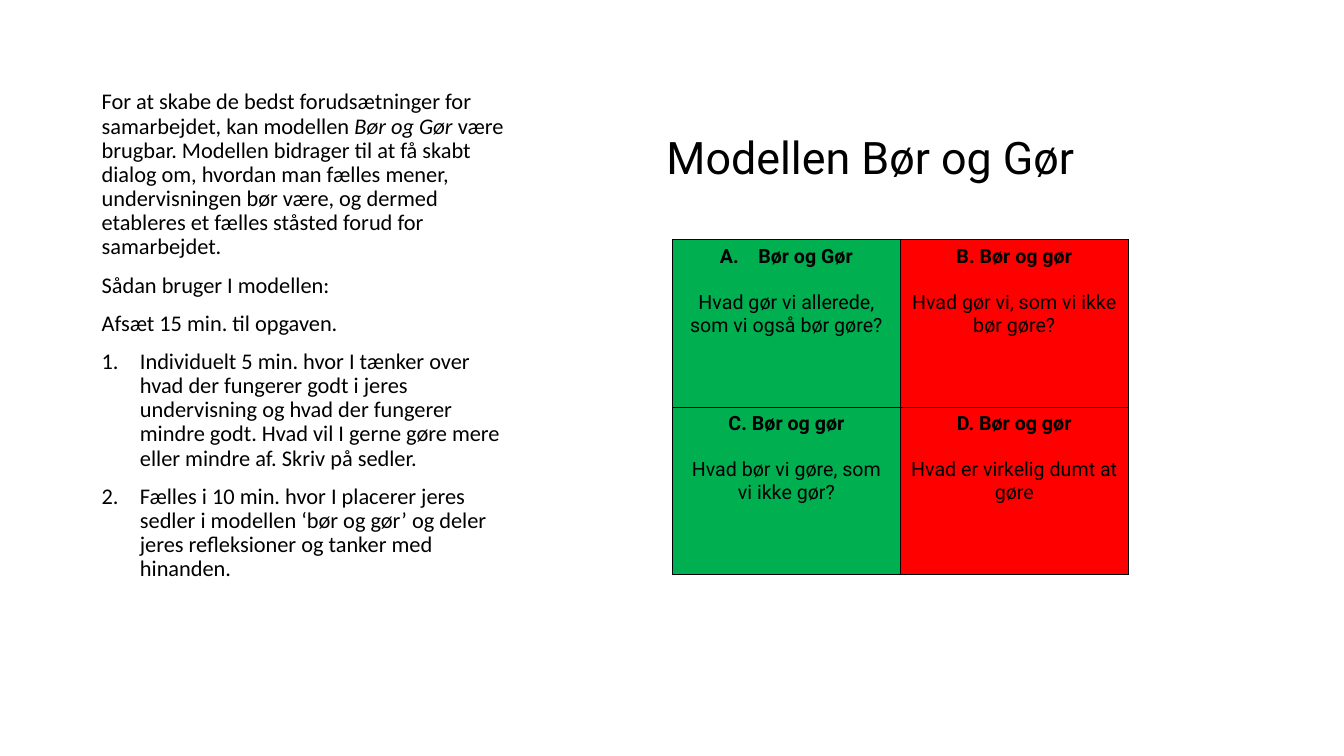
from lxml.etree import SubElement
from pptx import Presentation
from pptx.dml.color import RGBColor
from pptx.enum.text import MSO_ANCHOR, MSO_AUTO_SIZE, PP_ALIGN
from pptx.oxml.ns import qn
from pptx.util import Inches, Pt

COLORS = {"text": "000000", "do": "00B050", "avoid": "FF0000", "border": "000000"}

INTRODUCTION = [
    [("For at skabe de bedst forudsætninger for samarbejdet, kan modellen ", False),
     ("Bør og Gør ", True),
     ("være brugbar. Modellen bidrager til at få skabt dialog om, hvordan man fælles "
      "mener, undervisningen bør være, og dermed etableres et fælles ståsted forud for "
      "samarbejdet.", False)],
    [("Sådan bruger I modellen:", False)],
    [("Afsæt 15 min. til opgaven.", False)],
]
STEPS = [
    [("Individuelt 5 min. hvor I tænker over hvad der fungerer godt i jeres undervisning "
      "og hvad der fungerer mindre godt. Hvad vil I gerne gøre mere eller mindre af. "
      "Skriv på sedler.", False)],
    [("Fælles i 10 min. hvor I placerer jeres sedler i modellen ‘bør og gør’ og deler "
      "jeres refleksioner og tanker med hinanden.", False)],
]
MODEL = [
    [("Bør og Gør", "Hvad gør vi allerede, som vi også bør gøre?"),
     ("B. Bør og gør", "Hvad gør vi, som vi ikke bør gøre?")],
    [("C. Bør og gør", "Hvad bør vi gøre, som vi ikke gør?"),
     ("D. Bør og gør", "Hvad er virkelig dumt at gøre")],
]


class SlideBuilder:
    heading_font = "Roboto"
    body_font = "Calibri"

    def __init__(self, presentation):
        self.slide = presentation.slides.add_slide(presentation.slide_layouts[5])

    def format_run(self, run, font, size, bold=False, italic=False):
        run.font.name = font
        run.font.size = Pt(size)
        run.font.bold = bold
        run.font.italic = italic
        run.font.color.rgb = RGBColor.from_string(COLORS["text"])

    def number(self, paragraph, scheme):
        """Give the paragraph automatic numbering with a hanging indent."""
        properties = paragraph._p.get_or_add_pPr()
        properties.set("marL", str(Inches(0.38)))
        properties.set("indent", str(-Inches(0.38)))
        SubElement(properties, qn("a:buFont"), typeface="+mj-lt")
        SubElement(properties, qn("a:buAutoNum"), type=scheme)

    def title(self, text, left, top, width, height):
        shape = self.slide.shapes.title
        shape.left, shape.top = Inches(left), Inches(top)
        shape.width, shape.height = Inches(width), Inches(height)
        text_frame = shape.text_frame
        text_frame.text = text
        text_frame.auto_size = MSO_AUTO_SIZE.NONE
        text_frame.vertical_anchor = MSO_ANCHOR.BOTTOM
        paragraph = text_frame.paragraphs[0]
        paragraph.alignment = PP_ALIGN.LEFT
        paragraph.line_spacing = 0.9
        self.format_run(paragraph.runs[0], self.heading_font, 32)

    def body(self, paragraphs, steps, left, top, width, height):
        shape = self.slide.shapes.add_textbox(
            Inches(left), Inches(top), Inches(width), Inches(height))
        text_frame = shape.text_frame
        text_frame.word_wrap = True
        for index, pieces in enumerate(paragraphs + steps):
            paragraph = text_frame.add_paragraph() if index else text_frame.paragraphs[0]
            paragraph.line_spacing = 0.9
            paragraph.space_before = Pt(10)
            if index >= len(paragraphs):
                self.number(paragraph, "arabicPeriod")
            for text, italic in pieces:
                run = paragraph.add_run()
                run.text = text
                self.format_run(run, self.body_font, 16, italic=italic)

    def border(self, cell):
        properties = cell._tc.get_or_add_tcPr()
        for side in ("a:lnL", "a:lnR", "a:lnT", "a:lnB"):
            line = SubElement(properties, qn(side), w=str(Pt(1)))
            fill = SubElement(line, qn("a:solidFill"))
            SubElement(fill, qn("a:srgbClr"), val=COLORS["border"])

    def model_cell(self, cell, heading, question, color):
        self.border(cell)
        cell.fill.solid()
        cell.fill.fore_color.rgb = RGBColor.from_string(COLORS[color])
        cell.text_frame.text = f"{heading}\n{question}"
        for paragraph, bold in zip(cell.text_frame.paragraphs, (True, False)):
            paragraph.alignment = PP_ALIGN.CENTER
            self.format_run(paragraph.runs[0], self.heading_font, 14, bold=bold)
        cell.text_frame.paragraphs[1].space_before = Pt(16.4)

    def model_table(self, rows, left, top, column_width, row_height):
        row_count, column_count = len(rows), len(rows[0])
        table = self.slide.shapes.add_table(
            row_count, column_count, Inches(left), Inches(top),
            Inches(column_width * column_count), Inches(row_height * row_count)).table
        table.first_row = table.horz_banding = False
        for row_index, row in enumerate(rows):
            for column_index, (heading, question) in enumerate(row):
                color = ("do", "avoid")[column_index]
                self.model_cell(table.cell(row_index, column_index), heading, question, color)
        self.number(table.cell(0, 0).text_frame.paragraphs[0], "alphaUcPeriod")


def main():
    presentation = Presentation()
    presentation.slide_width = Inches(13.33)
    presentation.slide_height = Inches(7.5)
    builder = SlideBuilder(presentation)
    builder.title("Modellen Bør og Gør", 6.51, 0.13, 5.65, 1.75)
    builder.body(INTRODUCTION, STEPS, 0.91, 0.85, 4.3, 5.77)
    builder.model_table(MODEL, 6.67, 2.38, 2.26, 1.66)
    presentation.save("out.pptx")


if __name__ == "__main__":
    main()
